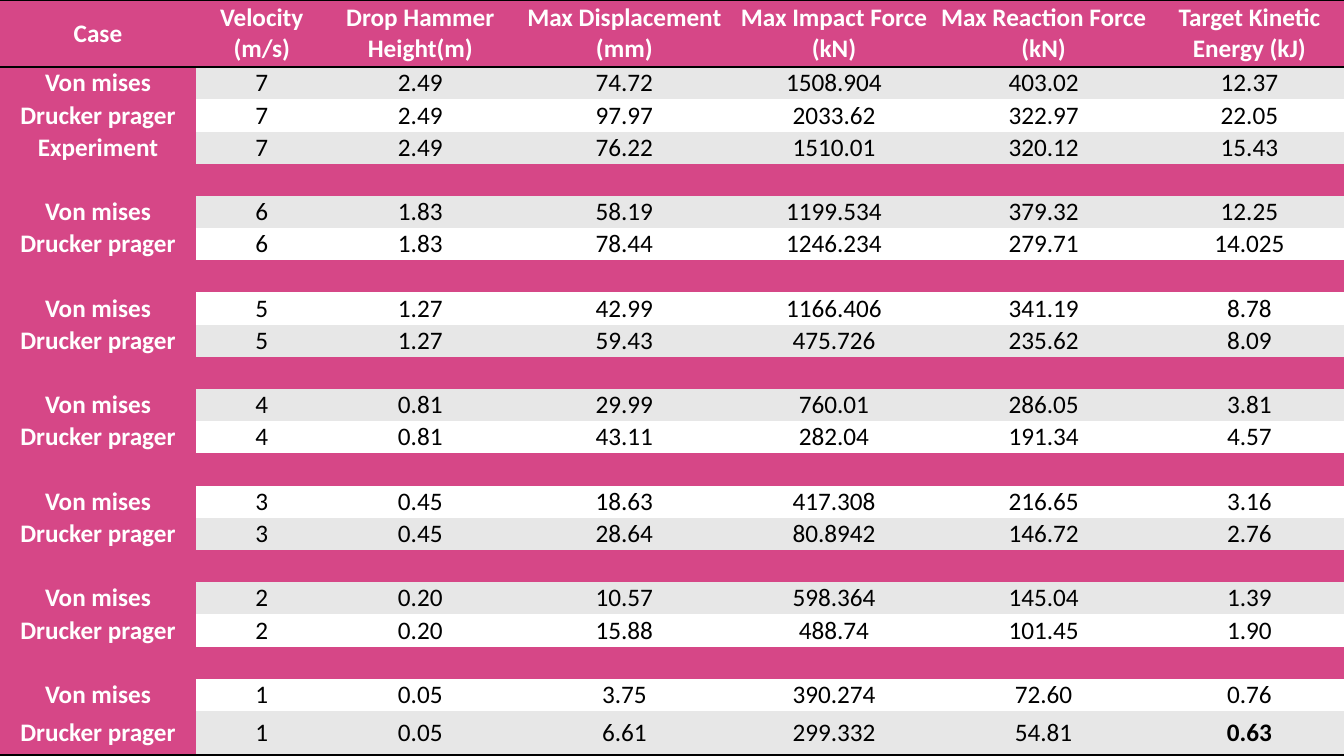
from dataclasses import dataclass

from lxml import etree
from pptx import Presentation
from pptx import util as u
from pptx.dml import color
from pptx.enum import text
from pptx.oxml import ns


@dataclass(frozen=True)
class Theme:
    pink: str = "D64787"
    grey: str = "E7E7E7"
    white: str = "FFFFFF"
    black: str = "000000"
    font: str = "Calibri"
    size: int = 18
    rule: int = 2


THEME = Theme()
NO_GRID_STYLE = "{2D5ABB26-0587-4C30-8999-92F81FD0307C}"

HEADINGS = ["Case", "Velocity\n(m/s)", "Drop Hammer Height(m)",
            "Max Displacement\n(mm)", "Max Impact Force (kN)",
            "Max Reaction Force (kN)", "Target Kinetic Energy (kJ)"]
CASES = ["Von mises", "Drucker prager", "Experiment"]

# Velocity, drop height, then displacement, impact, reaction, energy per case
DROPS = [
    ("7", "2.49", ["74.72 1508.904 403.02 12.37",
                   "97.97 2033.62 322.97 22.05",
                   "76.22 1510.01 320.12 15.43"]),
    ("6", "1.83", ["58.19 1199.534 379.32 12.25",
                   "78.44 1246.234 279.71 14.025"]),
    ("5", "1.27", ["42.99 1166.406 341.19 8.78",
                   "59.43 475.726 235.62 8.09"]),
    ("4", "0.81", ["29.99 760.01 286.05 3.81",
                   "43.11 282.04 191.34 4.57"]),
    ("3", "0.45", ["18.63 417.308 216.65 3.16",
                   "28.64 80.8942 146.72 2.76"]),
    ("2", "0.20", ["10.57 598.364 145.04 1.39",
                   "15.88 488.74 101.45 1.90"]),
    ("1", "0.05", ["3.75 390.274 72.60 0.76",
                   "6.61 299.332 54.81 0.63"]),
]

COLUMN_WIDTHS = [140, 94, 132.5, 159, 140.5, 159, 135]
HEADER_HEIGHT, ROW_HEIGHT = 48, 23


def result_rows():
    """Header, then the drops; None marks the band between two drops."""
    rows = [HEADINGS]
    for velocity, height, results in DROPS:
        if len(rows) > 1:
            rows.append(None)
        for case, values in zip(CASES, results):
            rows.append([case, velocity, height, *values.split()])
    return rows


def fill_cell(cell, fill):
    cell.margin_left = cell.margin_right = u.Pt(3)
    cell.margin_top = cell.margin_bottom = 0
    cell.vertical_anchor = text.MSO_ANCHOR.MIDDLE
    cell.fill.solid()
    cell.fill.fore_color.rgb = color.RGBColor.from_string(fill)


def write_cell(cell, wording, ink, bold):
    cell.text_frame.text = wording
    for paragraph in cell.text_frame.paragraphs:
        paragraph.alignment = text.PP_ALIGN.CENTER
        for run in paragraph.runs:
            run.font.name = THEME.font
            run.font.size = u.Pt(THEME.size)
            run.font.bold = bold
            run.font.color.rgb = color.RGBColor.from_string(ink)


def rule_cell(cell, sides):
    """Black rules on the given sides, "T" before "B"."""
    properties = cell._tc.get_or_add_tcPr()
    for position, side in enumerate(sides):
        line = etree.Element(ns.qn(f"a:ln{side}"), w=str(u.Pt(THEME.rule)))
        solid = etree.SubElement(line, ns.qn("a:solidFill"))
        etree.SubElement(solid, ns.qn("a:srgbClr"), val=THEME.black)
        properties.insert(position, line)


def add_results_table(slide, left, top, width, height):
    rows = result_rows()
    last = len(rows) - 1
    frame = slide.shapes.add_table(len(rows), len(HEADINGS), u.Pt(left),
                                   u.Pt(top), u.Pt(width), u.Pt(height))
    table = frame.table
    table.first_row = table.horz_banding = False
    table._tbl.tblPr.find(ns.qn("a:tableStyleId")).text = NO_GRID_STYLE

    # Column widths and row heights; the last row takes what is left
    scale = width / sum(COLUMN_WIDTHS)
    for column, column_width in zip(table.columns, COLUMN_WIDTHS):
        column.width = u.Pt(column_width * scale)
    for row in table.rows:
        row.height = u.Pt(ROW_HEIGHT)
    table.rows[0].height = u.Pt(HEADER_HEIGHT)
    table.rows[last].height = u.Pt(
        height - HEADER_HEIGHT - (last - 1) * ROW_HEIGHT)

    for r, wordings in enumerate(rows):
        band = THEME.grey if r % 2 else THEME.white
        for c in range(len(HEADINGS)):
            cell = table.cell(r, c)
            heading = r == 0 or c == 0
            fill_cell(cell, THEME.pink if heading or not wordings else band)
            if wordings:
                final_energy = r == last and c == len(HEADINGS) - 1
                write_cell(cell, wordings[c],
                           THEME.white if heading else THEME.black,
                           heading or final_energy)
            if r in (0, last):
                rule_cell(cell, "TB" if r == 0 else "B")
        if not wordings:
            table.cell(r, 0).merge(table.cell(r, len(HEADINGS) - 1))


def main():
    deck = Presentation()
    deck.slide_width, deck.slide_height = u.Pt(960), u.Pt(540)
    slide = deck.slides.add_slide(deck.slide_layouts[6])
    add_results_table(slide, 0, 0, 960, 540)
    deck.save("out.pptx")


if __name__ == "__main__":
    main()
